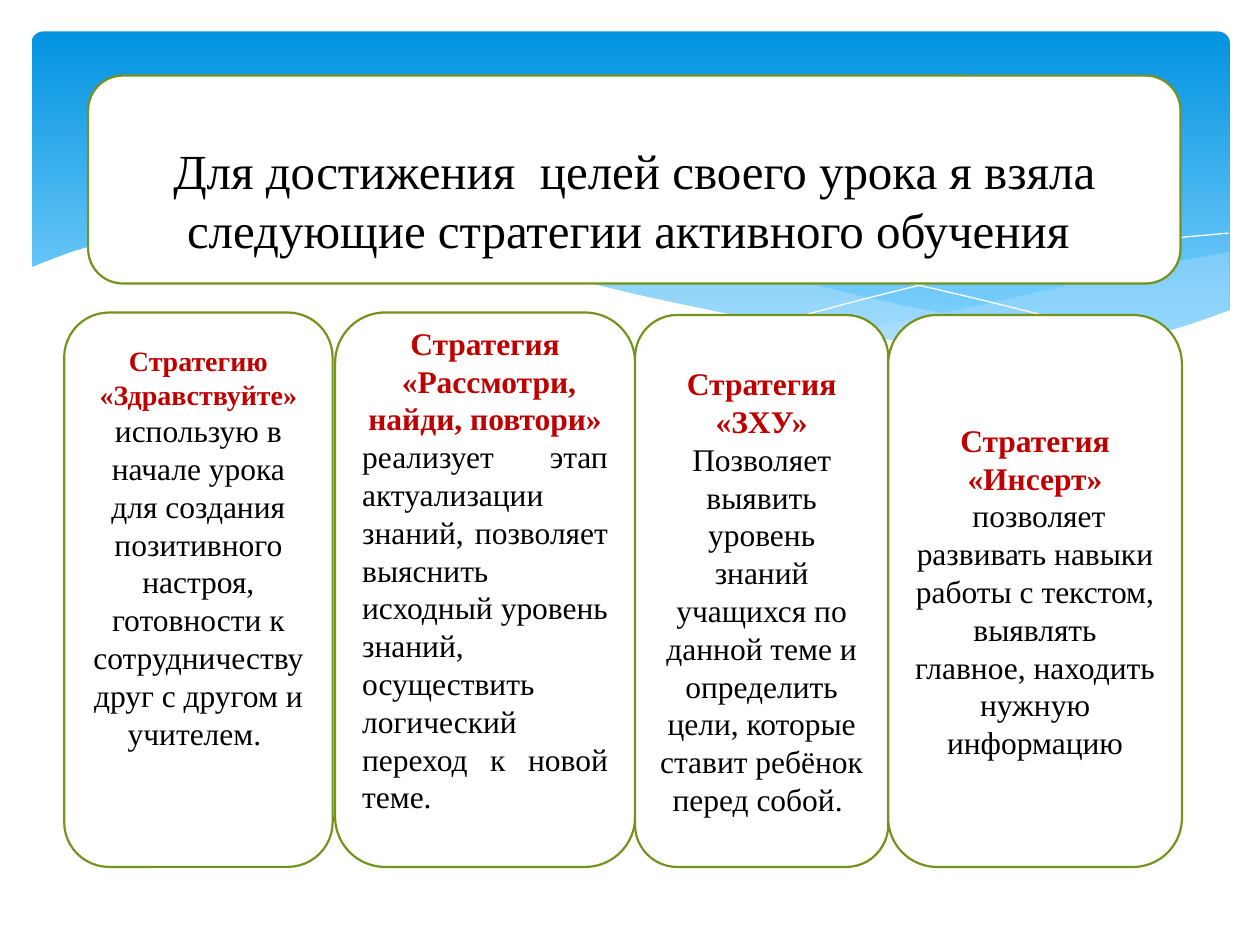
from dataclasses import dataclass

from pptx import Presentation
from pptx.dml.color import RGBColor
from pptx.enum.shapes import MSO_SHAPE
from pptx.enum.text import MSO_ANCHOR, PP_ALIGN
from pptx.oxml.ns import qn
from pptx.util import Pt
from lxml.etree import SubElement


@dataclass(frozen=True)
class Theme:
    """Colours, font and type sizes of the slide."""
    sky: str = "0293E0"
    pale_sky: str = "83D3FE"
    mist: str = "C6E7FC"
    white: str = "FFFFFF"
    olive: str = "74931C"
    red: str = "C00000"
    black: str = "000000"
    font: str = "Times New Roman"
    title: int = 28
    body: int = 18
    small: int = 16


T = Theme()
CENTER, JUSTIFY = PP_ALIGN.CENTER, PP_ALIGN.JUSTIFY

SWOOP = [(687, 44.6), (653, 56.1), (613.5, 64), (566, 67), (506, 63.3),
         (434.2, 53.3), (364.4, 39.6), (305.3, 25.9), (246.3, 12.9),
         (193.7, 4.3), (149, 0.7), (111, 0), (69.2, 2.1), (31.7, 9.3), (0, 20.9)]
RIGHT_TOP = [(686, 11.5), (646.6, 18.7), (603.4, 28.1), (544.4, 41.7),
             (491.8, 52.5), (459.4, 58.3)]
RIGHT_BOTTOM = [(459.4, 58.3), (491, 62.6), (528.5, 66.2), (561.7, 67.7),
                (598.4, 66.2), (635, 61.2), (661.7, 54), (686, 45.3)]
LONG_TOP = [(626.5, 64), (564.5, 54.7), (491.8, 40.3), (436.4, 27.3), (383, 15.1),
            (335.6, 7.2), (286, 2.1), (243.4, 0.7), (189.4, 5)]
LONG_BOTTOM = [(189.4, 5), (244, 13.7), (306.8, 27.3), (365, 40.3), (416.2, 51.1),
               (473, 60.5), (522, 66.2), (564.5, 67.7), (600.5, 66.9), (626.5, 64)]
FALLING = [(206, 7.9), (237.7, 3.6), (283, 2.1), (335.6, 4.3), (383.8, 9.3),
           (441.4, 17.3), (507, 30.2), (581.8, 48.2), (636.5, 63.3)]
RISING = [(424.9, 52.5), (483.9, 36.7), (542.2, 23), (607, 10.8),
          (648.8, 4.3), (685.5, 0.7)]

TITLE = "Для достижения  целей своего урока я взяла следующие стратегии активного обучения "
CARDS = [
    ((36.7, 178.6, 153.4, 316.8), ["Стратегию «Здравствуйте»"],
     "использую в начале урока для создания позитивного настроя, готовности к "
     "сотрудничеству друг с другом и учителем. ", T.small, CENTER, 48),
    ((191.5, 178.6, 171.4, 316.8), ["Стратегия", " «Рассмотри, найди, повтори»"],
     "реализует этап актуализации знаний, позволяет выяснить исходный уровень знаний, "
     "осуществить логический переход к новой теме.", T.body, JUSTIFY, 23),
    ((362.9, 180, 144.7, 315.4), ["Стратегия «ЗХУ»"],
     "Позволяет выявить уровень знаний учащихся по данной теме и определить цели, "
     "которые ставит ребёнок перед собой. ", T.body, CENTER, 0),
    ((507.6, 180, 167.8, 315.4), ["Стратегия «Инсерт»"],
     " позволяет развивать навыки работы с текстом, выявлять главное, находить "
     "нужную информацию", T.body, CENTER, 0),
]


def rgb(code):
    """Turn a hex code into a colour."""
    return RGBColor.from_string(code)


def smooth_curve(knots, steps=6):
    """Return points of a Catmull-Rom curve through the knots."""
    ends = [knots[0], *knots, knots[-1]]
    points = [knots[0]]
    for a, b, c, d in zip(ends, ends[1:], ends[2:], ends[3:]):
        for i in range(1, steps + 1):
            t = i / steps
            points.append(tuple(
                q + t / 2 * (r - p + t * (2 * p - 5 * q + 4 * r - s + t * (3 * (q - r) + s - p)))
                for p, q, r, s in zip(a, b, c, d)))
    return points


def add_outline(slide, box, points, color, alpha=100, closed=True):
    """Draw a filled area, or a hairline when it is not closed."""
    left, top = box
    pts = [(Pt(left + x), Pt(top + y)) for x, y in points]
    builder = slide.shapes.build_freeform(*pts[0])
    builder.add_line_segments(pts[1:], close=closed)
    sp = builder.convert_to_shape()
    sp.shadow.inherit = False
    if not closed:
        sp.fill.background()
        sp.line.color.rgb = rgb(color)
        sp.line.width = Pt(0)
        return
    sp.fill.solid()
    sp.fill.fore_color.rgb = rgb(color)
    sp.line.fill.background()
    if alpha < 100:
        clr = sp.fill._xPr.find(qn("a:solidFill"))[0]
        SubElement(clr, qn("a:alpha"), val=str(alpha * 1000))


def add_round_rect(slide, box):
    """Add a rounded rectangle without a shadow."""
    sp = slide.shapes.add_shape(MSO_SHAPE.ROUNDED_RECTANGLE, *map(Pt, box))
    sp.shadow.inherit = False
    return sp


def add_sky(slide, box):
    """Draw the blue gradient panel."""
    sp = add_round_rect(slide, box)
    sp.adjustments[0] = 0.034
    sp.line.fill.background()
    sp.fill.gradient()
    sp.fill.gradient_angle = 270
    for stop, color, pos in zip(sp.fill.gradient_stops, (T.sky, T.pale_sky), (0, 0.9)):
        stop.color.rgb = rgb(color)
        stop.position = pos


def add_waves(slide, box):
    """Draw the translucent waves, hairlines and white swoop."""
    for top, bottom, alpha in ((RIGHT_TOP, RIGHT_BOTTOM, 29), (LONG_TOP, LONG_BOTTOM, 40)):
        add_outline(slide, box, smooth_curve(top) + smooth_curve(bottom), T.mist, alpha)
    for knots in (FALLING, RISING):
        add_outline(slide, box, smooth_curve(knots), T.white, closed=False)
    add_outline(slide, box, smooth_curve(SWOOP) + [(0, 104.4), (687, 104.4)], T.white)


def add_panel(slide, box, paragraphs, extra_top=0, extra_bottom=0):
    """Draw a white panel holding (text, size, colour, bold, alignment) paragraphs."""
    sp = add_round_rect(slide, box)
    sp.fill.solid()
    sp.fill.fore_color.rgb = rgb(T.white)
    sp.line.color.rgb = rgb(T.olive)
    sp.line.width = Pt(1.25)
    tf = sp.text_frame
    tf.word_wrap = True
    tf.vertical_anchor = MSO_ANCHOR.MIDDLE
    tf.margin_top = Pt(3.6 + extra_top)
    tf.margin_bottom = Pt(3.6 + extra_bottom)
    for i, (text, size, color, bold, align) in enumerate(paragraphs):
        p = tf.add_paragraph() if i else tf.paragraphs[0]
        p.text = text
        p.alignment = align
        font = p.runs[0].font
        font.name, font.size, font.bold = T.font, Pt(size), bold
        font.color.rgb = rgb(color)


def add_card(slide, box, heads, body, head_size, align, extra_bottom):
    """Draw one strategy card with a red heading and black body."""
    paragraphs = [(head, head_size, T.red, True, CENTER) for head in heads]
    paragraphs.append((body, T.body, T.black, False, align))
    add_panel(slide, box, paragraphs, extra_bottom=extra_bottom)


def main():
    """Build and save the slide."""
    prs = Presentation()
    prs.slide_width, prs.slide_height = Pt(720), Pt(540)
    slide = prs.slides.add_slide(prs.slide_layouts[6])
    add_sky(slide, (18, 18, 684.7, 194.4))
    add_waves(slide, (16.5, 132.5))
    add_panel(slide, (50.4, 43.2, 624.2, 118.8),
              [(TITLE, T.title, T.black, False, CENTER)], extra_top=23)
    for card in CARDS:
        add_card(slide, *card)
    prs.save("out.pptx")


if __name__ == "__main__":
    main()
